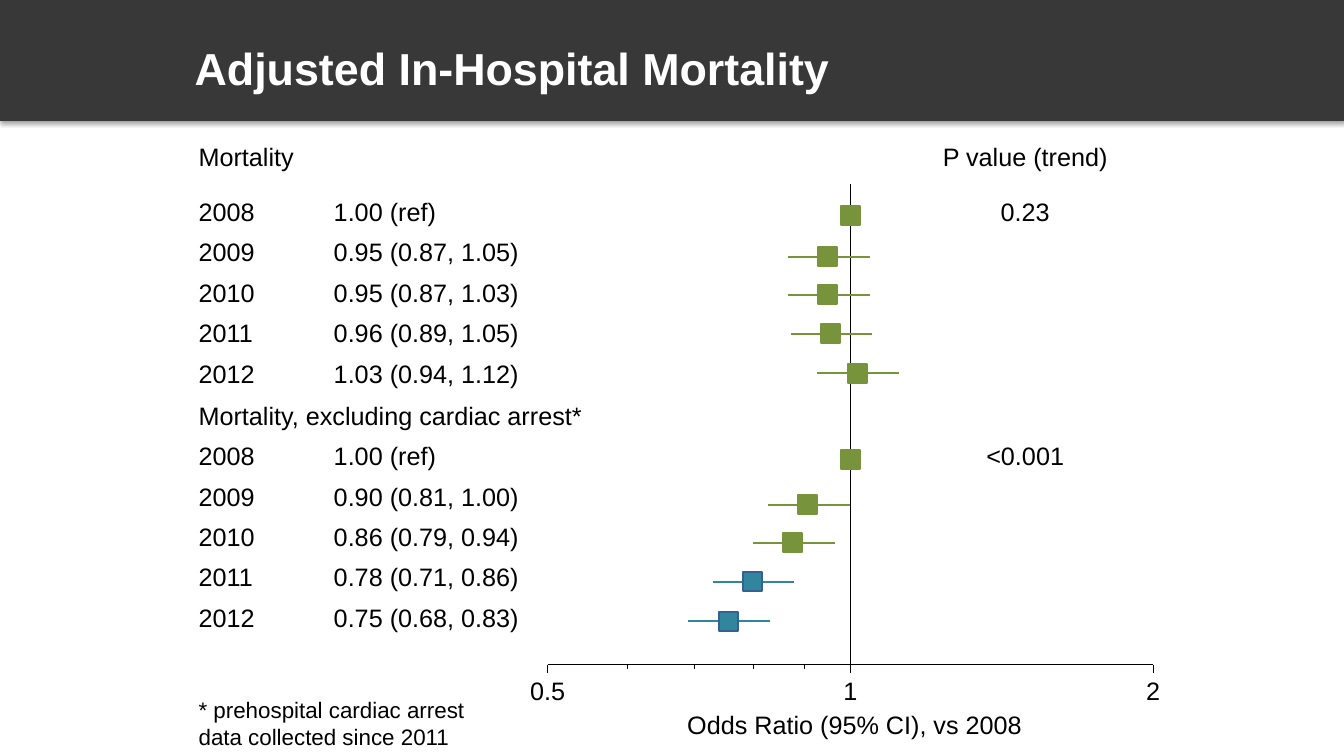
import math

import lxml.etree
import pptx
import pptx.dml.color
import pptx.enum.shapes
import pptx.enum.text
import pptx.oxml
import pptx.oxml.ns
import pptx.util

Pt = pptx.util.Pt
RGBColor = pptx.dml.color.RGBColor
ALIGN = pptx.enum.text.PP_ALIGN
RECTANGLE = pptx.enum.shapes.MSO_SHAPE.RECTANGLE

BLACK = RGBColor(0x00, 0x00, 0x00)
WHITE = RGBColor(0xFF, 0xFF, 0xFF)
CHARCOAL = RGBColor(0x38, 0x38, 0x38)
GREEN = RGBColor(0x77, 0x93, 0x3C)
TEAL = RGBColor(0x31, 0x85, 0x9C)
BLUE = RGBColor(0x37, 0x60, 0x92)
NO_GRID_STYLE = "{2D5ABB26-0587-4C30-8999-92F81FD0307C}"

deck = pptx.Presentation()
deck.slide_width = Pt(960)
deck.slide_height = Pt(540)
page = deck.slides.add_slide(deck.slide_layouts[5])


def add_line(x1, y1, x2, y2, color, width):
    line = page.shapes.add_connector(
        pptx.enum.shapes.MSO_CONNECTOR.STRAIGHT, Pt(x1), Pt(y1), Pt(x2), Pt(y2))
    line.line.color.rgb = color
    line.line.width = Pt(width)
    properties = line.element.find(pptx.oxml.ns.qn("p:spPr"))
    lxml.etree.SubElement(properties, pptx.oxml.ns.qn("a:effectLst"))


def format_text(frame, text, size, color=BLACK, align=ALIGN.LEFT, bold=False):
    frame.text = text
    para = frame.paragraphs[0]
    para.alignment = align
    para.font.name = "Arial"
    para.font.size = Pt(size)
    para.font.color.rgb = color
    para.font.bold = bold


# Title on its dark band
title = page.shapes.title
title.left, title.top, title.width, title.height = Pt(131.8), Pt(25.7), Pt(696), Pt(44.6)
format_text(title.text_frame, "Adjusted In-Hospital Mortality", 32, WHITE, bold=True)
title.text_frame.auto_size = pptx.enum.text.MSO_AUTO_SIZE.NONE
title.text_frame.vertical_anchor = pptx.enum.text.MSO_ANCHOR.MIDDLE

band = page.shapes.add_shape(RECTANGLE, 0, 0, deck.slide_width, Pt(86.4))
band.fill.solid()
band.fill.fore_color.rgb = CHARCOAL
band.line.fill.background()
band.element.find(pptx.oxml.ns.qn("p:spPr")).append(pptx.oxml.parse_xml(
    '<a:effectLst xmlns:a="http://schemas.openxmlformats.org/drawingml/2006/main">'
    '<a:outerShdw blurRad="39370" dist="22860" dir="5400000" rotWithShape="0">'
    '<a:srgbClr val="000000"><a:alpha val="35000"/></a:srgbClr>'
    '</a:outerShdw></a:effectLst>'))
title.element.addprevious(band.element)

# Odds ratio tables: top, first row height, its top margin, merged row, rows
ROW_HEIGHT = 28.92
EMPTY_ROW = ("", "", "")
mortality_tables = [
    (79.2, 59, 23.7, 6, [
        ("Mortality", "", "P value (trend)"),
        ("2008", "1.00 (ref)", "0.23"),
        ("2009", "0.95 (0.87, 1.05)", ""),
        ("2010", "0.95 (0.87, 1.03)", ""),
        ("2011", "0.96 (0.89, 1.05)", ""),
        ("2012", "1.03 (0.94, 1.12)", ""),
    ] + [EMPTY_ROW] * 7),
    (283.7, ROW_HEIGHT, 3.6, 0, [
        ("Mortality, excluding cardiac arrest*", "", ""),
        ("2008", "1.00 (ref)", "<0.001"),
        ("2009", "0.90 (0.81, 1.00)", ""),
        ("2010", "0.86 (0.79, 0.94)", ""),
        ("2011", "0.78 (0.71, 0.86)", ""),
        ("2012", "0.75 (0.68, 0.83)", ""),
        EMPTY_ROW,
    ]),
]
for top, first_height, first_margin, merged_row, rows in mortality_tables:
    height = first_height + ROW_HEIGHT * (len(rows) - 1)
    frame = page.shapes.add_table(len(rows), 3, Pt(135.4), Pt(top), Pt(675.4), Pt(height))
    next(frame.element.iter(pptx.oxml.ns.qn("a:tableStyleId"))).text = NO_GRID_STYLE
    table = frame.table
    table.first_row = False
    table.horz_banding = False
    for column, width in zip(table.columns, (96.5, 421.9, 157)):
        column.width = Pt(width)
    for row_index, values in enumerate(rows):
        table.rows[row_index].height = Pt(ROW_HEIGHT if row_index else first_height)
        for column_index, value in enumerate(values):
            cell = table.cell(row_index, column_index)
            cell.fill.background()
            cell.margin_left = cell.margin_right = Pt(6.5)
            cell.margin_top = Pt(3.6 if row_index else first_margin)
            align = ALIGN.CENTER if column_index == 2 else ALIGN.LEFT
            format_text(cell.text_frame, value, 18, align=align)
    table.cell(merged_row, 0).merge(table.cell(merged_row, 1))

# Logarithmic axis with the reference line at 1
REFERENCE_X, DOUBLING, AXIS_Y, HAIRLINE = 607.4, 216.2, 474.7, 0.25
add_line(REFERENCE_X, AXIS_Y, REFERENCE_X, 131.8, BLACK, HAIRLINE)
add_line(REFERENCE_X - DOUBLING, AXIS_Y, REFERENCE_X + DOUBLING, AXIS_Y, BLACK, HAIRLINE)
for ratio in (0.5, 0.6, 0.7, 0.8, 0.9, 1, 2):
    x = REFERENCE_X + DOUBLING * math.log2(ratio)
    labelled = ratio in (0.5, 1, 2)
    add_line(x, AXIS_Y, x, AXIS_Y + (5.8 if labelled else 2.9), BLACK, HAIRLINE)
    if labelled:
        box = page.shapes.add_textbox(Pt(x - 18), Pt(482.7), Pt(36), Pt(21.6))
        text = box.text_frame
        text.margin_left = text.margin_right = text.margin_top = text.margin_bottom = 0
        format_text(text, str(ratio), 18, align=ALIGN.CENTER)

# Estimates: centre x, centre y, fill, outline, has an interval
MARKER, INTERVAL = 13.6, 58.5
estimates = [
    (REFERENCE_X, 153.7, GREEN, GREEN, False),
    (591.1, 183.4, GREEN, GREEN, True),
    (591.1, 210.5, GREEN, GREEN, True),
    (593.2, 238.5, GREEN, GREEN, True),
    (612.4, 266.6, GREEN, GREEN, True),
    (REFERENCE_X, 328, GREEN, GREEN, False),
    (577.1, 360.7, GREEN, GREEN, True),
    (566.3, 387.6, GREEN, GREEN, True),
    (537.5, 415.6, TEAL, BLUE, True),
    (520.2, 443.7, TEAL, BLUE, True),
]
for x, y, fill, outline, has_interval in estimates:
    if has_interval:
        start = x - 28.5
        add_line(start, y, start + INTERVAL, y, fill, 1.5)
    marker = page.shapes.add_shape(
        RECTANGLE, Pt(x - MARKER / 2), Pt(y - MARKER / 2), Pt(MARKER), Pt(MARKER))
    marker.shadow.inherit = False
    marker.fill.solid()
    marker.fill.fore_color.rgb = fill
    marker.line.color.rgb = outline
    marker.line.width = Pt(1.5)

# Axis title and footnote
captions = [
    (483.8, 503.3, 255.6, 28.8, 18, False, "Odds Ratio (95% CI), vs 2008"),
    (134.8, 493.9, 221, 46.1, 16, True,
     "* prehospital cardiac arrest data collected since 2011"),
]
for left, top, width, height, size, wrap, caption in captions:
    box = page.shapes.add_textbox(Pt(left), Pt(top), Pt(width), Pt(height))
    box.text_frame.word_wrap = wrap
    format_text(box.text_frame, caption, size)

deck.save("out.pptx")
